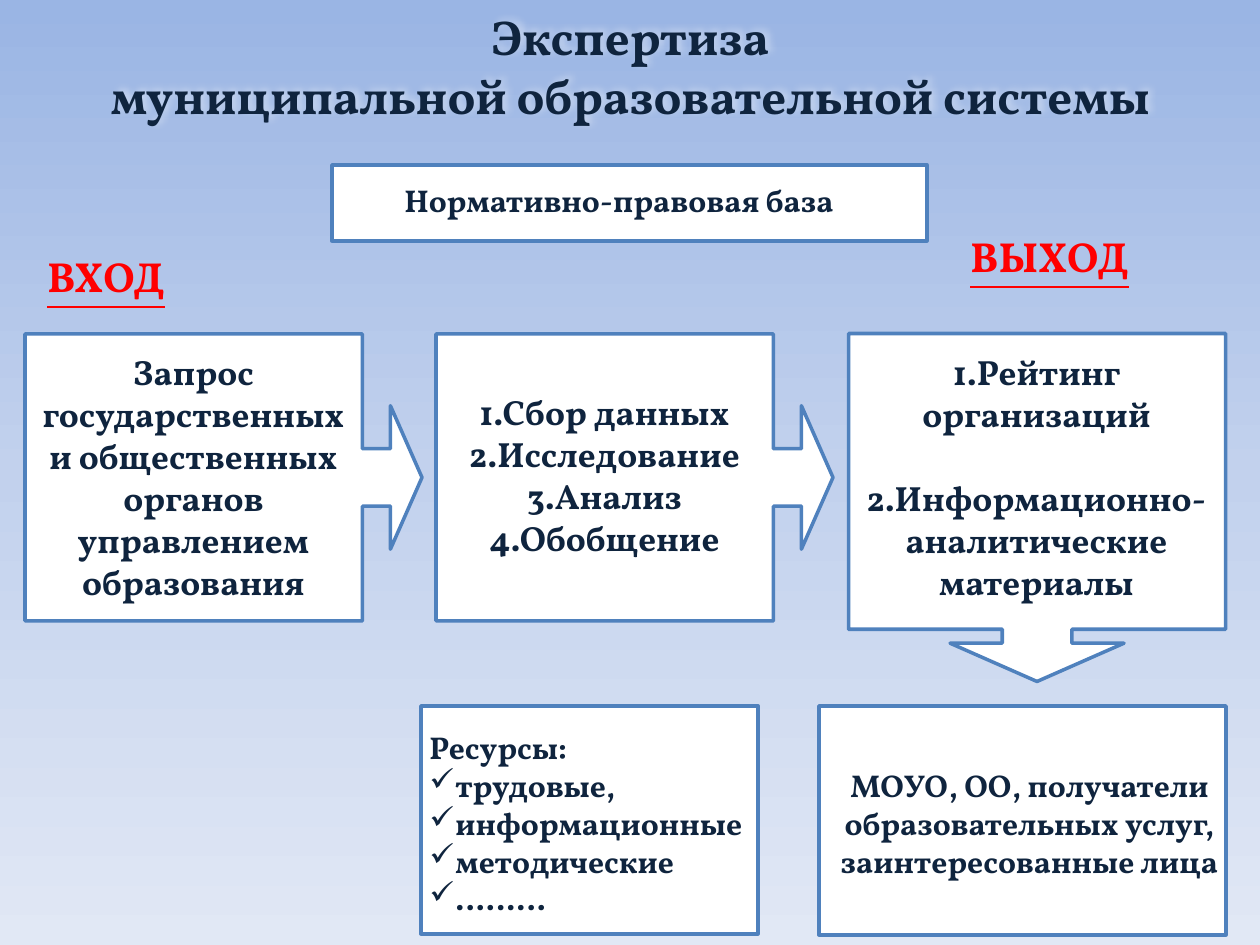
import copy

import pptx
import pptx.dml.color
import pptx.enum.shapes
import pptx.enum.text
import pptx.oxml
import pptx.oxml.ns
import pptx.util
from lxml import etree

RGBColor = pptx.dml.color.RGBColor
SHAPE = pptx.enum.shapes.MSO_SHAPE
LEFT = pptx.enum.text.PP_ALIGN.LEFT
CENTER = pptx.enum.text.PP_ALIGN.CENTER
qn = pptx.oxml.ns.qn

PX = 914400 / 126
FONT = "Vollkorn"
NAVY = RGBColor(0x0F, 0x24, 0x3E)
RED = RGBColor(0xFF, 0x00, 0x00)
WHITE = RGBColor(0xFF, 0xFF, 0xFF)
BLUE = RGBColor(0x4F, 0x81, 0xBD)
SKY = [RGBColor(0x9A, 0xB5, 0xE4), RGBColor(0xC2, 0xD1, 0xED), RGBColor(0xE1, 0xE8, 0xF5)]


def emu(*lengths):
    """Turn px lengths into EMU."""
    return [round(length * PX) for length in lengths]


def write(shape, text, size, color=NAVY, align=CENTER):
    frame = shape.text_frame
    frame.word_wrap = True
    frame.vertical_anchor = pptx.enum.text.MSO_ANCHOR.TOP
    frame.text = text
    for paragraph in frame.paragraphs:
        paragraph.alignment = align
        for run in paragraph.runs:
            run.font.name = FONT
            run.font.size = pptx.util.Pt(size)
            run.font.bold = True
            run.font.color.rgb = color
    return frame.paragraphs


presentation = pptx.Presentation()
presentation.slide_width, presentation.slide_height = emu(1260, 945)
slide = presentation.slides.add_slide(presentation.slide_layouts[5])

# Background: three-stop gradient from top to bottom
background = slide.background.fill
background.gradient()
background.gradient_angle = 270
first_stop = slide._element.find(".//" + qn("a:gs"))
first_stop.addnext(copy.deepcopy(first_stop))
for index, (stop, color) in enumerate(zip(background.gradient_stops, SKY)):
    stop.position = index / 2
    stop.color.rgb = color

# Title with a soft white shadow
title = slide.shapes.title
title.left, title.top, title.width, title.height = emu(0, 0, 1260, 131)
write(title, "Экспертиза\nмуниципальной образовательной системы", 28)
title._element.spPr.append(pptx.oxml.parse_xml(
    '<a:effectLst xmlns:a="http://schemas.openxmlformats.org/drawingml/2006/main">'
    '<a:outerShdw blurRad="50800" dist="38100" dir="18900000" algn="bl">'
    '<a:srgbClr val="FFFFFF"><a:alpha val="40000"/></a:srgbClr>'
    '</a:outerShdw></a:effectLst>'))

# Boxes and arrow callouts: kind, left, top, width, height, rotation
boxes = [
    (SHAPE.RECTANGLE, 332, 165, 595, 76, 0),
    (SHAPE.RECTANGLE, 421, 706, 337, 228, 0),
    (SHAPE.RECTANGLE, 819, 706, 407, 229, 0),
    (SHAPE.RIGHT_ARROW_CALLOUT, 25, 334, 397, 287, 0),
    (SHAPE.RIGHT_ARROW_CALLOUT, 436, 334, 397, 287, 0),
    (SHAPE.RIGHT_ARROW_CALLOUT, 863, 319, 348, 377, 90),
]
for kind, left, top, width, height, rotation in boxes:
    shape = slide.shapes.add_shape(kind, *emu(left, top, width, height))
    shape.rotation = rotation
    shape.shadow.inherit = False
    shape.fill.solid()
    shape.fill.fore_color.rgb = WHITE
    shape.line.color.rgb = BLUE
    shape.line.width = pptx.util.Pt(2)
    if kind == SHAPE.RIGHT_ARROW_CALLOUT:
        for index, value in enumerate((0.2, 0.25, 0.11, 0.85)):
            shape.adjustments[index] = value

# Texts: left, top, width, height, text, size, colour, alignment
texts = [
    (392, 175, 456, 51, "Нормативно-правовая база", 18, NAVY, LEFT),
    (25, 344, 337, 267,
     "Запрос государственных и общественных органов управлением образования",
     20, NAVY, CENTER),
    (436, 384, 337, 182, "1.Сбор данных\n2.Исследование\n3.Анализ\n4.Обобщение",
     20, NAVY, CENTER),
    (848, 344, 377, 267, "1.Рейтинг организаций\n2.Информационно-аналитические материалы",
     20, NAVY, CENTER),
    (799, 760, 461, 127,
     "МОУО, ОО, получатели образовательных услуг,\nзаинтересованные лица",
     18, NAVY, CENTER),
    (417, 722, 348, 204, "Ресурсы:\nтрудовые,\nинформационные\nметодические\n………",
     18, NAVY, LEFT),
    (35, 244, 179, 64, "ВХОД", 24, RED, LEFT),
    (958, 224, 208, 64, "ВЫХОД", 24, RED, LEFT),
]
for left, top, width, height, text, size, color, align in texts:
    box = slide.shapes.add_textbox(*emu(left, top, width, height))
    paragraphs = write(box, text, size, color, align)
    if color == RED:
        paragraphs[0].runs[0].font.underline = True
    if text.startswith("1.Рейтинг"):
        paragraphs[1].space_before = pptx.util.Pt(24)
    if text.startswith("Ресурсы"):
        (hanging,) = emu(26)
        for paragraph in paragraphs[1:]:
            properties = paragraph._p.get_or_add_pPr()
            properties.set("marL", str(hanging))
            properties.set("indent", str(-hanging))
            etree.SubElement(properties, qn("a:buChar")).set("char", "✓")

presentation.save("out.pptx")
